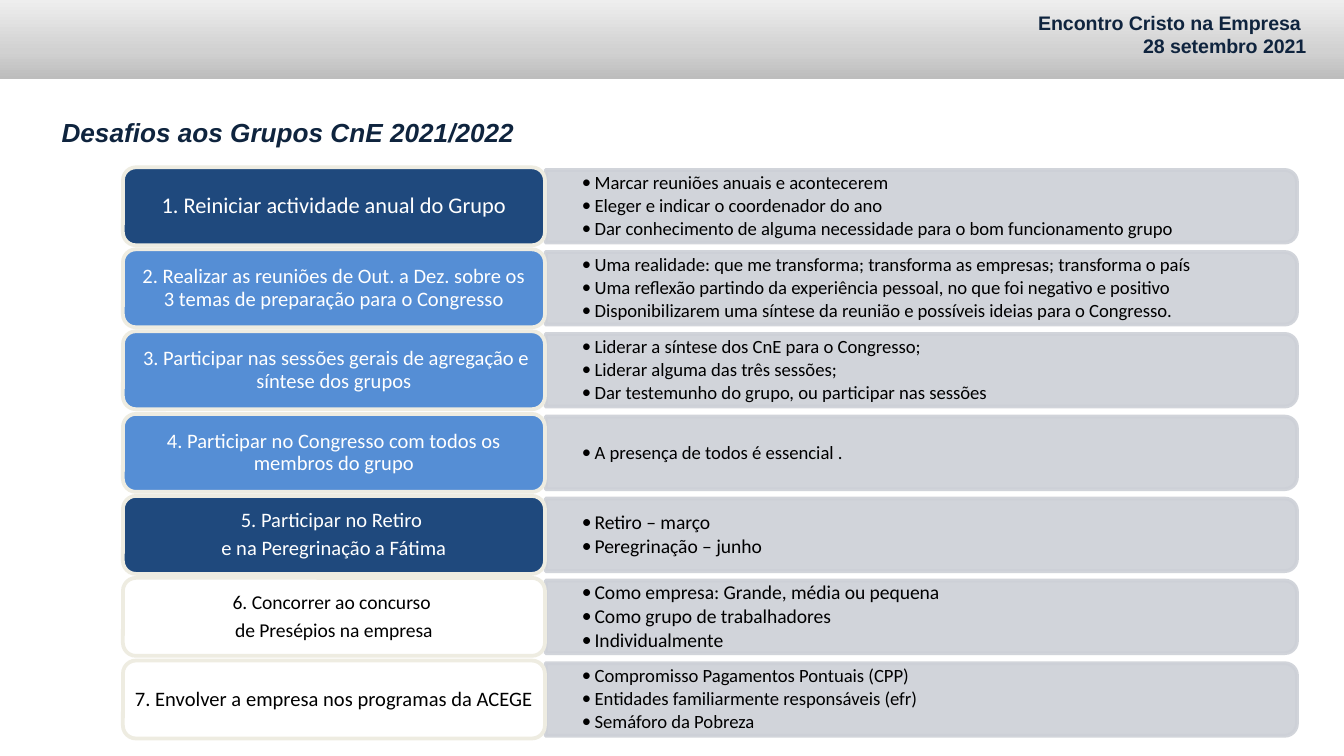
from copy import deepcopy

from lxml.etree import SubElement
from pptx import Presentation
from pptx.dml.color import RGBColor
from pptx.enum.shapes import MSO_SHAPE
from pptx.enum.text import MSO_ANCHOR, PP_ALIGN
from pptx.oxml.ns import qn
from pptx.util import Emu, Pt

EMU_PER_PX = 4572
NAVY = RGBColor(0x0F, 0x24, 0x3E)
DARK_BLUE = RGBColor(0x1F, 0x49, 0x7D)
LIGHT_BLUE = RGBColor(0x55, 0x8E, 0xD5)
CREAM = RGBColor(0xEE, 0xEC, 0xE1)
PANEL_GREY = RGBColor(0xCD, 0xD0, 0xD7)
BLACK = RGBColor(0, 0, 0)
WHITE = RGBColor(0xFF, 0xFF, 0xFF)
HEADER_STOPS = [
    (0, RGBColor(0xBD, 0xBD, 0xBD)),
    (0.35, RGBColor(0xD1, 0xD1, 0xD1)),
    (1, RGBColor(0xEE, 0xEE, 0xEE)),
]

CHALLENGES = [
    (DARK_BLUE, 12, ["1. Reiniciar actividade anual do Grupo"], 10, [
        "Marcar reuniões anuais e acontecerem",
        "Eleger e indicar o coordenador do ano",
        "Dar conhecimento de alguma necessidade para o bom funcionamento grupo"]),
    (LIGHT_BLUE, 11, ["2. Realizar as reuniões de Out. a Dez. sobre os\v"
                      "3 temas de preparação para o Congresso"], 10, [
        "Uma realidade: que me transforma; transforma as empresas; transforma o país",
        "Uma reflexão partindo da experiência pessoal, no que foi negativo e positivo",
        "Disponibilizarem uma síntese da reunião e possíveis ideias para o Congresso."]),
    (LIGHT_BLUE, 11, [" 3. Participar nas sessões gerais de agregação e síntese dos grupos"], 10, [
        "Liderar a síntese dos CnE para o Congresso;",
        "Liderar alguma das três sessões;",
        "Dar testemunho do grupo, ou participar nas sessões"]),
    (LIGHT_BLUE, 11, ["4. Participar no Congresso com todos os membros do grupo"], 10, [
        "A presença de todos é essencial ."]),
    (DARK_BLUE, 11, ["5. Participar no Retiro ", "e na Peregrinação a Fátima"], 10.5, [
        "Retiro – março",
        "Peregrinação – junho"]),
    (None, 10.5, ["6. Concorrer ao concurso ", "de Presépios na empresa"], 10.5, [
        "Como empresa: Grande, média ou pequena",
        "Como grupo de trabalhadores",
        "Individualmente"]),
    (None, 11, ["7. Envolver a empresa nos programas da ACEGE"], 10, [
        "Compromisso Pagamentos Pontuais (CPP)",
        "Entidades familiarmente responsáveis (efr)",
        "Semáforo da Pobreza"]),
]


def px(value):
    return Emu(value * EMU_PER_PX)


def add_shape(slide, kind, left, top, width, height):
    shape = slide.shapes.add_shape(kind, px(left), px(top), px(width), px(height))
    shape.shadow.inherit = False
    return shape


def add_text_box(slide, left, top, width, height):
    return slide.shapes.add_textbox(px(left), px(top), px(width), px(height))


def set_insets(frame, horizontal, vertical):
    frame.margin_left = frame.margin_right = px(horizontal)
    frame.margin_top = frame.margin_bottom = px(vertical)


def write_lines(frame, lines, size, color, name="Calibri", bold=False, italic=False,
                align=PP_ALIGN.LEFT, spacing=0.9, before=0, after=0, bulleted=False):
    frame.word_wrap = True
    for index, line in enumerate(lines):
        paragraph = frame.paragraphs[0] if index == 0 else frame.add_paragraph()
        paragraph.text = line
        paragraph.alignment = align
        paragraph.line_spacing = spacing
        paragraph.space_before = Pt(before if index else 0)
        paragraph.space_after = Pt(after)
        if bulleted:
            properties = paragraph._p.get_or_add_pPr()
            properties.set("marL", str(px(19)))
            properties.set("indent", str(px(-19)))
            SubElement(properties, qn("a:buFont"), typeface=name)
            SubElement(properties, qn("a:buChar"), char="•")
        font = paragraph.font
        font.name, font.size, font.bold, font.italic = name, Pt(size), bold, italic
        font.color.rgb = color


def add_header(slide, left, top, width, height):
    band = add_shape(slide, MSO_SHAPE.RECTANGLE, left, top, width, height)
    band.line.fill.background()
    band.fill.gradient()
    band.fill.gradient_angle = 90
    stop_list = next(band._element.iter(qn("a:gsLst")))
    stop_list.append(deepcopy(stop_list[0]))
    for stop, (position, color) in zip(band.fill.gradient_stops, HEADER_STOPS):
        stop.position = position
        stop.color.rgb = color
    frame = add_text_box(slide, left + width - 1000, top, 964, 95).text_frame
    frame.vertical_anchor = MSO_ANCHOR.BOTTOM
    write_lines(frame, ["Encontro Cristo na Empresa ", "28 setembro 2021"], 10.5, NAVY,
                "Arial", bold=True, align=PP_ALIGN.RIGHT, spacing=0.8, before=2.5)


def add_title(slide, left, top, width, height):
    frame = add_text_box(slide, left, top, width, height).text_frame
    write_lines(frame, ["Desafios aos Grupos CnE 2021/2022"], 14, NAVY,
                "Arial", bold=True, italic=True, spacing=1)


def add_panel(slide, left, top, width, height, size, lines):
    panel = add_shape(slide, MSO_SHAPE.ROUND_2_SAME_RECTANGLE,
                      left + (width - height) // 2, top + (height - width) // 2, height, width)
    panel.rotation = 90
    panel.fill.solid()
    panel.fill.fore_color.rgb = PANEL_GREY
    panel.line.color.rgb = PANEL_GREY
    panel.line.width = Pt(2)
    for color in panel._element.spPr.iter(qn("a:srgbClr")):
        SubElement(color, qn("a:alpha"), val="90000")
    frame = add_text_box(slide, left, top + 5, width - 6, height - 10).text_frame
    frame.vertical_anchor = MSO_ANCHOR.MIDDLE
    set_insets(frame, 54, 0)
    write_lines(frame, lines, size, BLACK, after=1.5, bulleted=True)


def add_card(slide, left, top, width, height, fill, size, lines):
    card = add_shape(slide, MSO_SHAPE.ROUNDED_RECTANGLE, left, top, width, height)
    if fill is None:
        card.fill.background()
    else:
        card.fill.solid()
        card.fill.fore_color.rgb = fill
    card.line.color.rgb = CREAM
    card.line.width = Pt(2)
    frame = card.text_frame
    frame.vertical_anchor = MSO_ANCHOR.MIDDLE
    set_insets(frame, 10, 4)
    write_lines(frame, lines, size, BLACK if fill is None else WHITE,
                align=PP_ALIGN.CENTER, after=3.5)


def add_challenges(slide, left, top, width, height):
    card_width, card_height = 628, 116
    travel = height - card_height
    for index, (fill, card_size, heading, panel_size, details) in enumerate(CHALLENGES):
        row_top = top + travel * index // (len(CHALLENGES) - 1)
        add_panel(slide, left + card_width + 1, row_top + 4, width - card_width - 1, 108,
                  panel_size, details)
        add_card(slide, left, row_top, card_width, card_height, fill, card_size, heading)


def main():
    presentation = Presentation()
    presentation.slide_width = px(2000)
    presentation.slide_height = px(1125)
    slide = presentation.slides.add_slide(presentation.slide_layouts[6])
    add_header(slide, 0, 0, 2000, 117)
    add_title(slide, 72, 164, 1260, 72)
    add_challenges(slide, 183, 249, 1747, 850)
    presentation.save("out.pptx")


if __name__ == "__main__":
    main()
